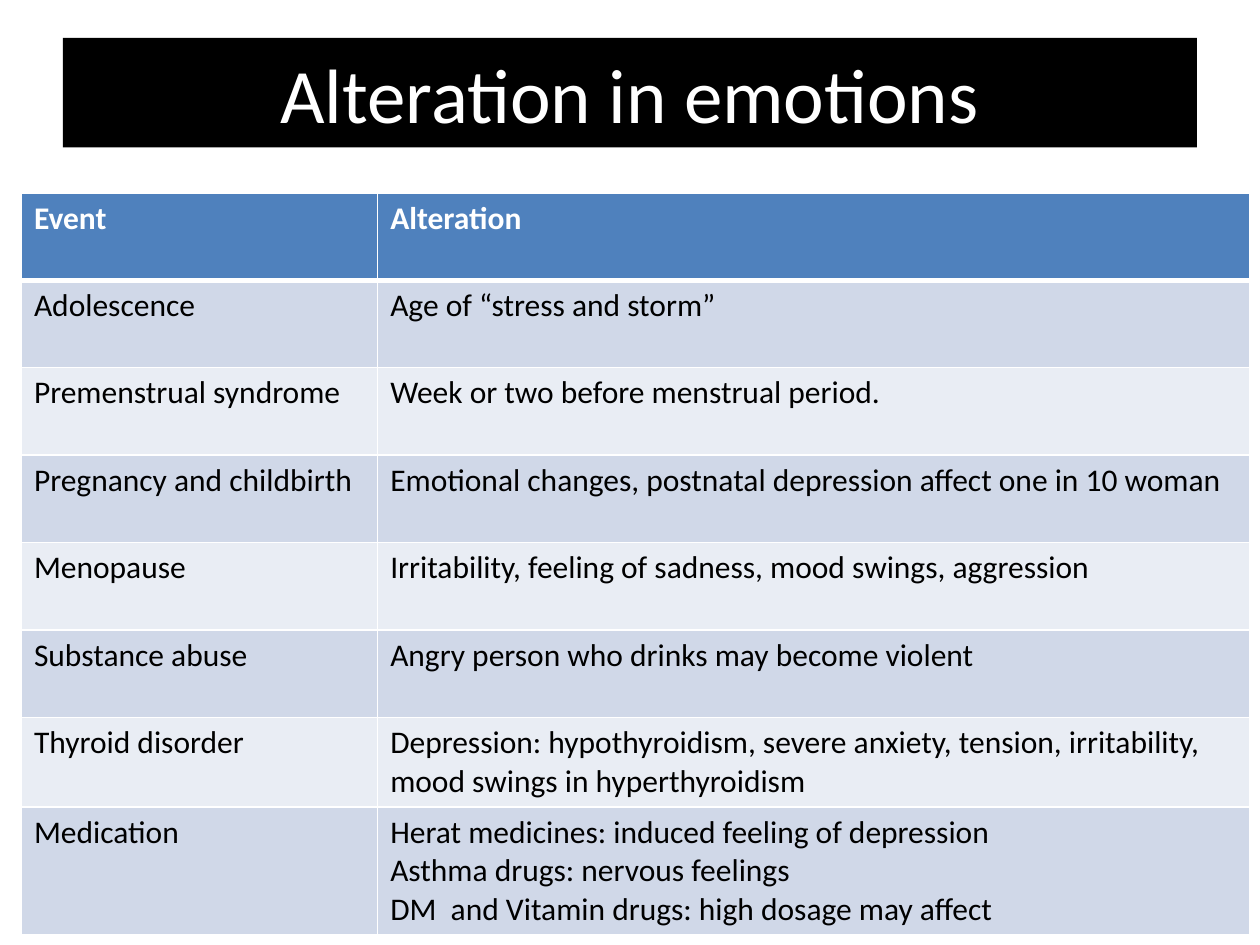
import pptx
import pptx.dml.color
import pptx.enum.shapes
import pptx.enum.text
import pptx.oxml
import pptx.oxml.ns
import pptx.util

RGBColor = pptx.dml.color.RGBColor
BLACK = RGBColor(0x00, 0x00, 0x00)
WHITE = RGBColor(0xFF, 0xFF, 0xFF)
HEADER_BLUE = RGBColor(0x4F, 0x81, 0xBD)
BAND_DARK = RGBColor(0xD0, 0xD8, 0xE8)
BAND_LIGHT = RGBColor(0xE9, 0xED, 0xF4)

FONT = "Calibri"
SLIDE_WIDTH = pptx.util.Inches(10)
SLIDE_HEIGHT = pptx.util.Inches(7.5)
COLUMN_SHARES = (0.29, 0.71)
ROW_SHARES = (0.119,) * 7 + (0.167,)

EVENTS = (
    ("Event", "Alteration"),
    ("Adolescence", "Age of “stress and storm”"),
    ("Premenstrual syndrome", "Week or two before menstrual period."),
    ("Pregnancy and childbirth",
     "Emotional changes, postnatal depression affect one in 10 woman"),
    ("Menopause", "Irritability, feeling of sadness, mood swings, aggression"),
    ("Substance abuse", "Angry person who drinks may become violent"),
    ("Thyroid disorder",
     "Depression: hypothyroidism, severe anxiety, tension, irritability, "
     "mood swings in hyperthyroidism"),
    ("Medication",
     "Herat medicines: induced feeling of depression\n"
     "Asthma drugs: nervous feelings\n"
     "DM  and Vitamin drugs: high dosage may affect"),
)


def share_box(left, top, width, height):
    return (int(SLIDE_WIDTH * left), int(SLIDE_HEIGHT * top),
            int(SLIDE_WIDTH * width), int(SLIDE_HEIGHT * height))


def style_text(text_frame, size, color, bold=False):
    for paragraph in text_frame.paragraphs:
        for run in paragraph.runs:
            run.font.name = FONT
            run.font.size = pptx.util.Pt(size)
            run.font.bold = bold
            run.font.color.rgb = color


def add_borders(cell, bottom_points):
    properties = cell._tc.get_or_add_tcPr()
    for side, points in (("L", 1), ("R", 1), ("T", 1), ("B", bottom_points)):
        properties.append(pptx.oxml.parse_xml(
            f'<a:ln{side} {pptx.oxml.ns.nsdecls("a")} w="{pptx.util.Pt(points)}">'
            f'<a:solidFill><a:srgbClr val="{WHITE}"/></a:solidFill></a:ln{side}>'))


def add_title(slide, box):
    title = slide.shapes.add_shape(
        pptx.enum.shapes.MSO_SHAPE.RECTANGLE, *box)
    title.shadow.inherit = False
    title.fill.solid()
    title.fill.fore_color.rgb = BLACK
    title.line.fill.background()
    title.text_frame.word_wrap = True
    title.text_frame.vertical_anchor = pptx.enum.text.MSO_ANCHOR.MIDDLE
    title.text_frame.text = "Alteration in emotions"
    title.text_frame.paragraphs[0].alignment = pptx.enum.text.PP_ALIGN.CENTER
    style_text(title.text_frame, 44, WHITE)


def add_events(slide, box):
    events = slide.shapes.add_table(
        len(EVENTS), len(COLUMN_SHARES), *box).table
    width, height = box[2:]
    for column, share in zip(events.columns, COLUMN_SHARES):
        column.width = int(width * share)
    for row, share in zip(events.rows, ROW_SHARES):
        row.height = int(height * share)
    for row_index, entries in enumerate(EVENTS):
        is_header = row_index == 0
        band = BAND_DARK if row_index % 2 else BAND_LIGHT
        for column_index, entry in enumerate(entries):
            cell = events.cell(row_index, column_index)
            cell.text_frame.text = entry
            style_text(cell.text_frame, 18,
                       WHITE if is_header else BLACK, is_header)
            add_borders(cell, 3 if is_header else 1)
            cell.fill.solid()
            cell.fill.fore_color.rgb = HEADER_BLUE if is_header else band


def main():
    presentation = pptx.Presentation()
    presentation.slide_width = SLIDE_WIDTH
    presentation.slide_height = SLIDE_HEIGHT
    slide = presentation.slides.add_slide(presentation.slide_layouts[6])
    add_title(slide, share_box(0.05, 0.04, 0.9, 0.116))
    add_events(slide, share_box(0.017, 0.204, 0.975, 0.778))
    presentation.save("out.pptx")


if __name__ == "__main__":
    main()
